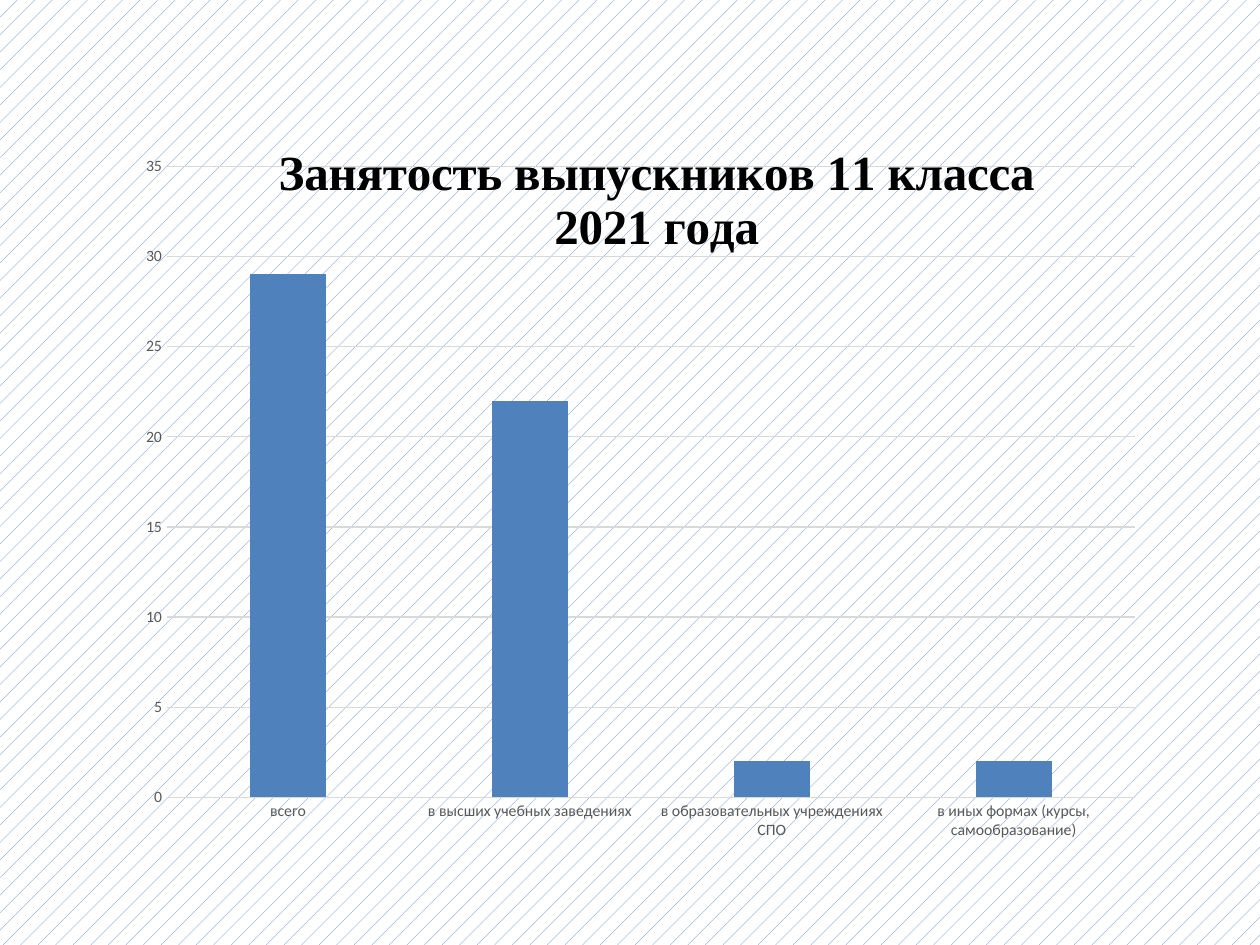
from lxml.etree import SubElement
from pptx import Presentation
from pptx.chart.data import CategoryChartData
from pptx.dml.color import RGBColor
from pptx.enum.chart import XL_CHART_TYPE, XL_TICK_MARK
from pptx.enum.dml import MSO_PATTERN
from pptx.oxml.ns import qn
from pptx.util import Inches, Pt

BLUE = RGBColor(0x4F, 0x81, 0xBD)
WHITE = RGBColor(0xFF, 0xFF, 0xFF)
BLACK = RGBColor(0, 0, 0)
LABEL_GREY = RGBColor(0x59, 0x59, 0x59)
LINE_GREY = RGBColor(0xD9, 0xD9, 0xD9)

GRADUATES = {
    "всего": 29,
    "в высших учебных заведениях": 22,
    "в образовательных учреждениях СПО": 2,
    "в иных формах (курсы, самообразование)": 2,
}


def style_font(font, name: str, size: float, color: RGBColor, bold: bool = False) -> None:
    font.name = name
    font.size = Pt(size)
    font.color.rgb = color
    font.bold = bold


def style_line(line) -> None:
    line.color.rgb = LINE_GREY
    line.width = Pt(0.75)


def place(element, **settings: object) -> None:
    """Give a chart title or plot area a manual layout, in fractions of the chart."""
    layout = element.find(qn("c:layout"))
    if layout is None:
        layout = SubElement(element, qn("c:layout"))
        text = element.find(qn("c:tx"))
        if text is not None:
            text.addnext(layout)
        else:
            element.insert(0, layout)
    for child in list(layout):
        layout.remove(child)
    manual = SubElement(layout, qn("c:manualLayout"))
    for tag, value in settings.items():
        SubElement(manual, qn(f"c:{tag}")).set("val", str(value))


def add_title(chart) -> None:
    title = chart.chart_title
    title.text_frame.text = "Занятость выпускников 11 класса 2021 года"
    run = title.text_frame.paragraphs[0].runs[0]
    style_font(run.font, "Times New Roman", 28, BLACK, bold=True)
    title.include_in_layout = True
    place(title._element, xMode="edge", yMode="edge", x=0.13, y=0.05)


def style_axes(chart) -> None:
    for axis in (chart.category_axis, chart.value_axis):
        axis.major_tick_mark = axis.minor_tick_mark = XL_TICK_MARK.NONE
        style_font(axis.tick_labels.font, "Calibri", 9, LABEL_GREY)
    style_line(chart.category_axis.format.line)
    chart.value_axis.format.line.fill.background()
    chart.value_axis.has_major_gridlines = True
    style_line(chart.value_axis.major_gridlines.format.line)


def add_graduates_chart(slide) -> None:
    data = CategoryChartData()
    data.categories = list(GRADUATES)
    data.add_series("Series 1", list(GRADUATES.values()))
    chart = slide.shapes.add_chart(
        XL_CHART_TYPE.COLUMN_CLUSTERED,
        Inches(1.08), Inches(0.75), Inches(8.17), Inches(6), data,
    ).chart
    style_font(chart.font, "Calibri", 10, BLACK)
    chart.has_legend = False
    add_title(chart)
    style_axes(chart)

    plot = chart.plots[0]
    plot.vary_by_categories = False
    plot.gap_width = 219
    plot.overlap = -27
    bars = plot.series[0].format.fill
    bars.solid()
    bars.fore_color.rgb = BLUE
    plot_area = chart._chartSpace.find(f".//{qn('c:plotArea')}")
    place(plot_area, layoutTarget="inner", xMode="edge", yMode="edge",
          x=0.03, y=0.095, w=0.94, h=0.835)


def main() -> None:
    presentation = Presentation()
    presentation.slide_width = Inches(10)
    presentation.slide_height = Inches(7.5)
    slide = presentation.slides.add_slide(presentation.slide_layouts[6])

    background = slide.background.fill
    background.patterned()
    background.pattern = MSO_PATTERN.PERCENT_5
    background.fore_color.rgb = BLUE
    background.back_color.rgb = WHITE

    add_graduates_chart(slide)
    presentation.save("out.pptx")


if __name__ == "__main__":
    main()
